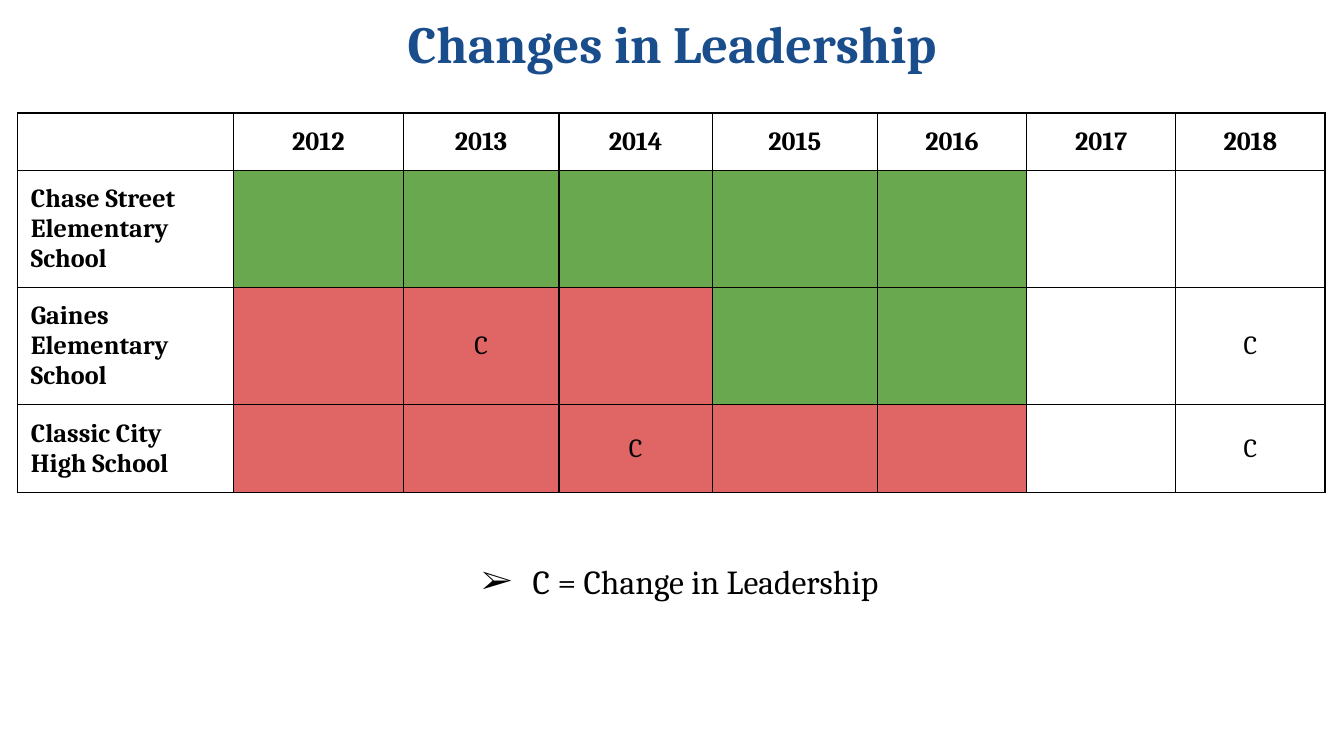
from lxml.etree import SubElement
from pptx import Presentation
from pptx.dml.color import RGBColor
from pptx.enum.text import MSO_ANCHOR, MSO_AUTO_SIZE, PP_ALIGN
from pptx.oxml.ns import qn
from pptx.util import Inches, Pt

FONT = "Cambria"
BLUE = RGBColor(0x19, 0x4D, 0x8C)
BLACK = RGBColor(0, 0, 0)
GREEN = RGBColor(0x6A, 0xA8, 0x4F)
RED = RGBColor(0xE0, 0x66, 0x66)

YEARS = [str(year) for year in range(2012, 2019)]
COLUMN_WIDTHS = [1.61, 1.26, 1.16, 1.14, 1.23, 1.11, 1.11, 1.11]
ROW_HEIGHTS = [0.43, 0.87, 0.87, 0.65]

# School, colour of each year from 2012, years with a change in leadership
SCHOOLS = [
    ("Chase Street Elementary School", [GREEN] * 5, []),
    ("Gaines Elementary School", [RED] * 3 + [GREEN] * 2, ["2013", "2018"]),
    ("Classic City High School", [RED] * 5, ["2014", "2018"]),
]


def write_text(paragraph, text, size=14, color=BLACK, bold=False,
               align=PP_ALIGN.CENTER):
    paragraph.alignment = align
    span = paragraph.add_run()
    span.text = text
    span.font.name = FONT
    span.font.size = Pt(size)
    span.font.bold = bold
    span.font.color.rgb = color


def place_placeholder(box, left, top, width, height):
    """Move a placeholder and return its first paragraph."""
    box.left, box.top = Inches(left), Inches(top)
    box.width, box.height = Inches(width), Inches(height)
    frame = box.text_frame
    frame.word_wrap = True
    frame.auto_size = MSO_AUTO_SIZE.NONE
    frame.vertical_anchor = MSO_ANCHOR.MIDDLE
    frame.margin_left = frame.margin_right = Inches(0.1)
    frame.margin_top = frame.margin_bottom = Inches(0.1)
    paragraph = frame.paragraphs[0]
    paragraph.space_before = Pt(0)
    return paragraph


def add_bullet(paragraph, symbol, size, indent, hanging):
    properties = paragraph._p.get_or_add_pPr()
    properties.set("marL", str(Inches(indent)))
    properties.set("indent", str(-Inches(hanging)))
    bullet_color = SubElement(properties, qn("a:buClr"))
    SubElement(bullet_color, qn("a:srgbClr"), val=str(BLACK))
    SubElement(properties, qn("a:buSzPts"), val=str(size * 100))
    SubElement(properties, qn("a:buFont"), typeface=FONT)
    SubElement(properties, qn("a:buChar"), char=symbol)


def add_borders(cell):
    properties = cell._tc.get_or_add_tcPr()
    for side in ("lnL", "lnR", "lnT", "lnB"):
        line = SubElement(properties, qn(f"a:{side}"), w=str(Pt(0.75)))
        fill = SubElement(line, qn("a:solidFill"))
        SubElement(fill, qn("a:srgbClr"), val=str(BLACK))


def format_cell(cell, text="", fill=None, **text_format):
    add_borders(cell)
    if fill is None:
        cell.fill.background()
    else:
        cell.fill.solid()
        cell.fill.fore_color.rgb = fill
    cell.vertical_anchor = MSO_ANCHOR.MIDDLE
    # Empty cells need no vertical margin, so they never stretch a row
    cell.margin_left = cell.margin_right = Inches(0.1)
    cell.margin_top = cell.margin_bottom = Inches(0.1 if text else 0)
    if text:
        write_text(cell.text_frame.paragraphs[0], text, **text_format)


def add_leadership_table(page):
    table = page.shapes.add_table(
        len(ROW_HEIGHTS), len(COLUMN_WIDTHS), Inches(0.13), Inches(0.84),
        Inches(sum(COLUMN_WIDTHS)), Inches(sum(ROW_HEIGHTS))).table
    table.first_row = table.horz_banding = False
    for column, width in zip(table.columns, COLUMN_WIDTHS):
        column.width = Inches(width)
    for row, height in zip(table.rows, ROW_HEIGHTS):
        row.height = Inches(height)

    # Header row
    for index, heading in enumerate([""] + YEARS):
        format_cell(table.cell(0, index), heading, bold=True)

    # One row per school
    for row, (school, colors, changes) in enumerate(SCHOOLS, start=1):
        format_cell(table.cell(row, 0), school, bold=True, align=PP_ALIGN.LEFT)
        for index, year in enumerate(YEARS):
            format_cell(table.cell(row, index + 1),
                        "C" if year in changes else "",
                        fill=colors[index] if index < len(colors) else None)


def main():
    # Widescreen page, 16:9
    deck = Presentation()
    deck.slide_width = Inches(10)
    deck.slide_height = deck.slide_width * 9 // 16
    page = deck.slides.add_slide(deck.slide_layouts[1])

    # Title
    title = place_placeholder(page.shapes.title, 0, 0, 10, 0.63)
    write_text(title, "Changes in Leadership", size=28, color=BLUE, bold=True)

    add_leadership_table(page)

    # Legend
    legend = place_placeholder(page.placeholders[1], 0.23, 3.73, 9.54, 1.19)
    add_bullet(legend, "➢", size=18, indent=0.5, hanging=0.38)
    write_text(legend, "C = Change in Leadership", size=18)

    deck.save("out.pptx")


if __name__ == "__main__":
    main()
